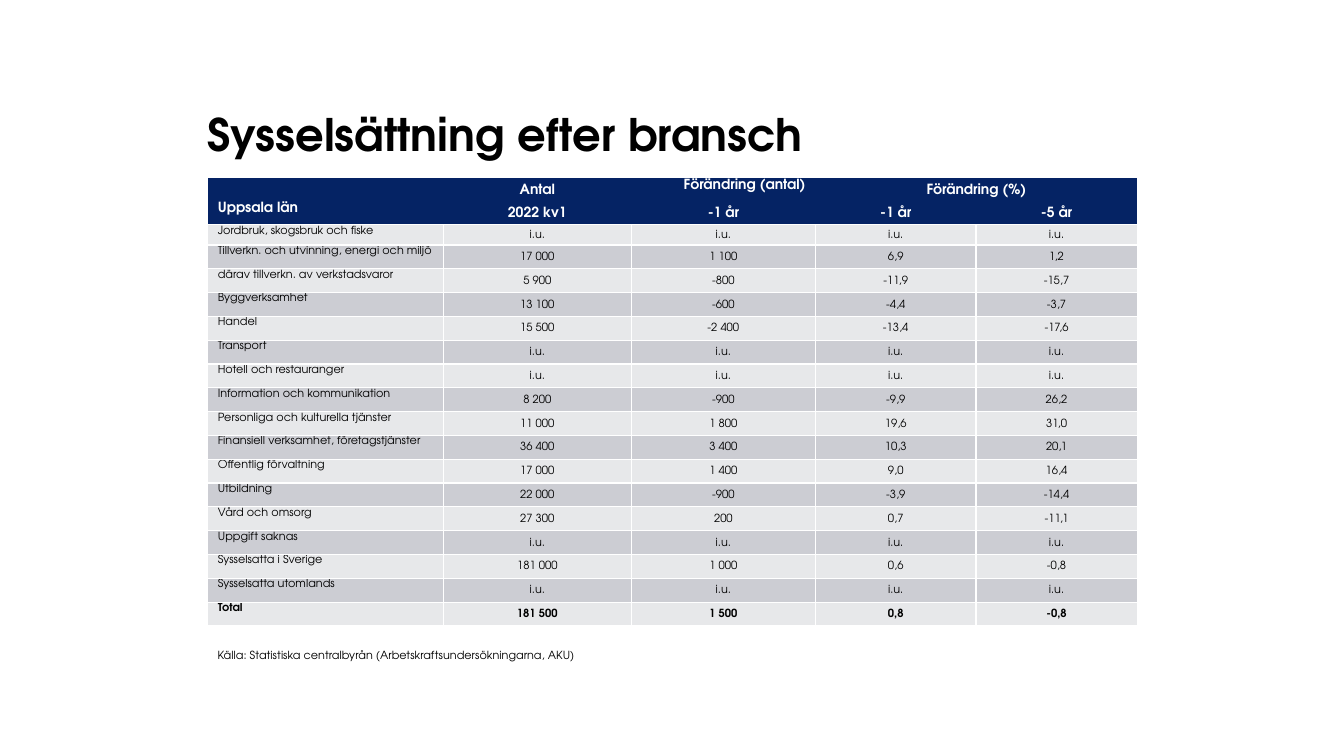
from lxml import etree
from pptx import Presentation
from pptx.dml.color import RGBColor
from pptx.enum.text import MSO_ANCHOR as ANCHOR, MSO_AUTO_SIZE as AUTOSIZE, PP_ALIGN as ALIGN
from pptx.oxml import parse_xml
from pptx.oxml.ns import qn
from pptx.util import Inches, Pt

FONT = "TeX Gyre Adventor"
COLORS = {"navy": "052364", "light": "E7E8EA", "dark": "CCCDD3", "white": "FFFFFF", "black": "000000"}
NO_STYLE = "{2D5ABB26-0587-4C30-8999-92F81FD0307C}"
DRAWING_NS = "http://schemas.openxmlformats.org/drawingml/2006/main"
LEFT, WIDTH = Inches(2.06), Inches(9.22)
COL_WIDTHS = [2.34, 1.86, 1.83, 1.59, 1.6]
HEADINGS = [
    ["", "Antal", "Förändring (antal)", "Förändring (%)", ""],
    ["Uppsala län", "2022 kv1", "-1 år", "-1 år", "-5 år"],
]
UNKNOWN = ["i.u."] * 4
INDUSTRIES = [
    ["Jordbruk, skogsbruk och fiske", *UNKNOWN],
    ["Tillverkn. och utvinning, energi och miljö", "17 000", "1 100", "6,9", "1,2"],
    ["därav tillverkn. av verkstadsvaror", "5 900", "-800", "-11,9", "-15,7"],
    ["Byggverksamhet", "13 100", "-600", "-4,4", "-3,7"],
    ["Handel", "15 500", "-2 400", "-13,4", "-17,6"],
    ["Transport", *UNKNOWN],
    ["Hotell och restauranger", *UNKNOWN],
    ["Information och kommunikation", "8 200", "-900", "-9,9", "26,2"],
    ["Personliga och kulturella tjänster", "11 000", "1 800", "19,6", "31,0"],
    ["Finansiell verksamhet, företagstjänster", "36 400", "3 400", "10,3", "20,1"],
    ["Offentlig förvaltning", "17 000", "1 400", "9,0", "16,4"],
    ["Utbildning", "22 000", "-900", "-3,9", "-14,4"],
    ["Vård och omsorg", "27 300", "200", "0,7", "-11,1"],
    ["Uppgift saknas", *UNKNOWN],
    ["Sysselsatta i Sverige", "181 000", "1 000", "0,6", "-0,8"],
    ["Sysselsatta utomlands", *UNKNOWN],
    ["Total", "181 500", "1 500", "0,8", "-0,8"],
]


def write_text(tf, text, size=8, color="black", bold=False, align=ALIGN.LEFT):
    """Write one formatted paragraph into a text frame."""
    p = tf.paragraphs[0]
    p.alignment = align
    p.font.size = Pt(size)
    if text:
        r = p.add_run()
        r.text = text
        r.font.name = FONT
        r.font.size = Pt(size)
        r.font.bold = bold
        r.font.color.rgb = RGBColor.from_string(COLORS[color])


def add_borders(cell):
    """Draw thin white lines on all four sides of a cell."""
    tc_pr = cell._tc.get_or_add_tcPr()
    for side in ("lnL", "lnR", "lnT", "lnB"):
        tc_pr.append(parse_xml(
            f'<a:{side} xmlns:a="{DRAWING_NS}" w="{Pt(1)}"><a:solidFill>'
            f'<a:srgbClr val="{COLORS["white"]}"/></a:solidFill></a:{side}>'))


def fill_cell(cell, text, fill, label=False, borders=True, **text_format):
    """Set the text, margins, borders and fill of a table cell."""
    cell.margin_left = cell.margin_right = Inches(0.1 if label else 0.01)
    cell.margin_top, cell.margin_bottom = Inches(0.01), 0
    cell.vertical_anchor = ANCHOR.TOP if label else ANCHOR.MIDDLE
    if borders:
        add_borders(cell)
    cell.fill.solid()
    cell.fill.fore_color.rgb = RGBColor.from_string(COLORS[fill])
    text_format.setdefault("align", ALIGN.LEFT if label else ALIGN.CENTER)
    write_text(cell.text_frame, text, **text_format)


def add_title(s, text):
    """Place and format the slide title."""
    sp = s.shapes.title
    sp.left, sp.top, sp.width, sp.height = LEFT, Inches(0.37), WIDTH, Inches(1.22)
    tf = sp.text_frame
    tf.margin_left = tf.margin_right = tf.margin_top = tf.margin_bottom = 0
    tf.vertical_anchor = ANCHOR.BOTTOM
    tf.auto_size = AUTOSIZE.NONE
    write_text(tf, text, size=32, bold=True)


def add_industry_table(s):
    """Add the employment table with its two heading rows."""
    heights = ([Inches(0.46) // 2] * 2 + [Inches(0.2)]
               + [Inches(3.78) // 16] * (len(INDUSTRIES) - 1))
    table = s.shapes.add_table(len(heights), len(COL_WIDTHS), LEFT, Inches(1.77),
                               WIDTH, sum(heights)).table
    tbl_pr = table._tbl.tblPr
    style = tbl_pr.find(qn("a:tableStyleId"))
    if style is None:
        style = etree.SubElement(tbl_pr, qn("a:tableStyleId"))
    style.text = NO_STYLE
    for column, width in zip(table.columns, COL_WIDTHS):
        column.width = Inches(width)
    for row, height in zip(table.rows, heights):
        row.height = height

    for i, headings in enumerate(HEADINGS):
        for j, text in enumerate(headings):
            over_antal = (i, j) == (0, 2)
            fill_cell(table.cell(i, j), text, "navy", label=j == 0 or over_antal,
                      borders=False, size=10, color="white", bold=True,
                      align=ALIGN.RIGHT if over_antal else ALIGN.LEFT if j == 0 else ALIGN.CENTER)
    table.cell(0, 3).merge(table.cell(0, 4))

    for i, values in enumerate(INDUSTRIES):
        for j, text in enumerate(values):
            fill_cell(table.cell(i + len(HEADINGS), j), text, ("light", "dark")[i % 2],
                      label=j == 0, bold=values[0] == "Total")


def add_source_note(s, text):
    """Add the source line below the table."""
    tf = s.shapes.add_textbox(LEFT, Inches(6.38), Inches(3.8), Inches(0.24)).text_frame
    tf.word_wrap = False
    tf.auto_size = AUTOSIZE.SHAPE_TO_FIT_TEXT
    write_text(tf, text)


def main():
    """Build and save the slide."""
    prs = Presentation()
    prs.slide_width, prs.slide_height = Inches(13.33), Inches(7.5)
    s = prs.slides.add_slide(prs.slide_layouts[5])
    add_title(s, "Sysselsättning efter bransch")
    add_industry_table(s)
    add_source_note(s, "Källa: Statistiska centralbyrån (Arbetskraftsundersökningarna, AKU)")
    prs.save("out.pptx")


if __name__ == "__main__":
    main()
